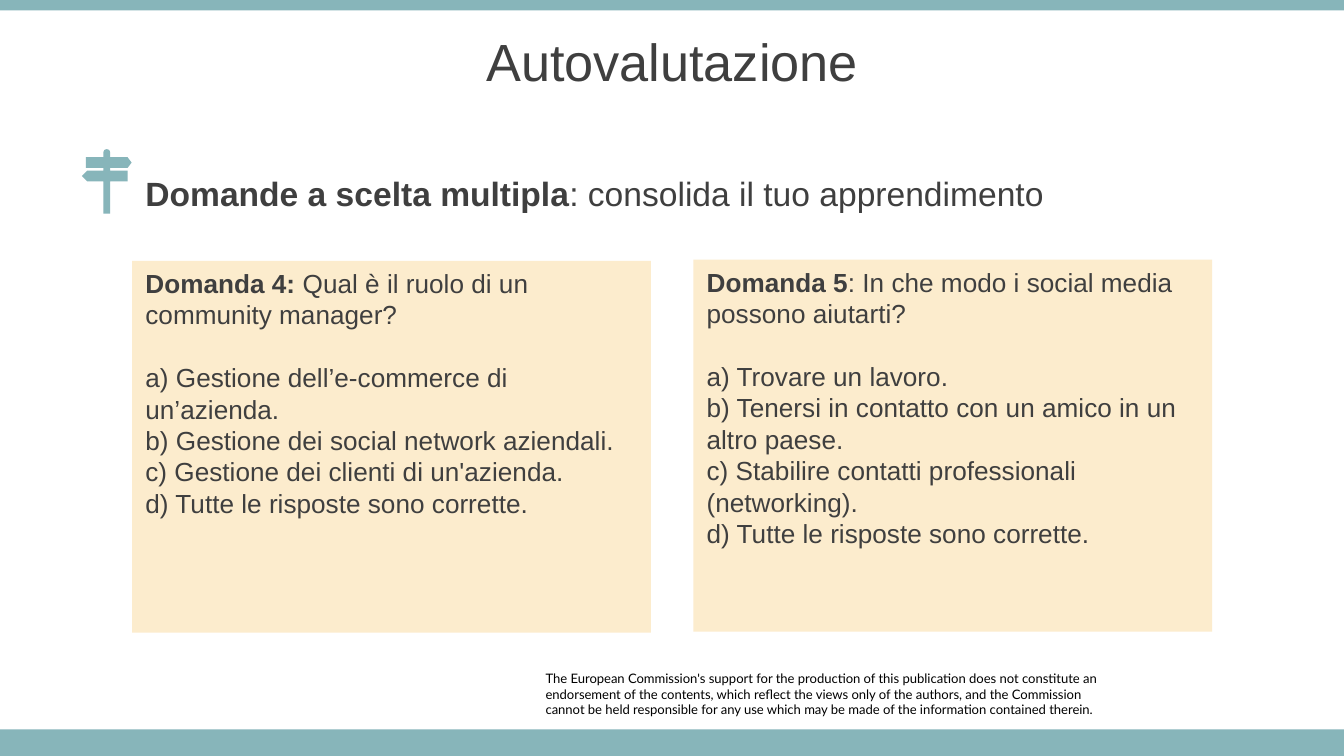
from math import cos, pi, sin

from pptx import Presentation
from pptx.dml.color import RGBColor
from pptx.enum.shapes import MSO_SHAPE
from pptx.enum.text import MSO_ANCHOR, PP_ALIGN
from pptx.util import Inches, Pt

TEAL, CREAM, GREY, BLACK = "87B5BA", "FCECCD", "3F3F3F", "000000"

prs = Presentation()
prs.slide_width, prs.slide_height = Inches(10), Inches(10) * 9 // 16
COL, ROW = prs.slide_width / 100, prs.slide_height / 100
s = prs.slides.add_slide(prs.slide_layouts[6])


def paint(sp, color):
    sp.shadow.inherit = False
    sp.fill.solid()
    sp.fill.fore_color.rgb = RGBColor.from_string(color)
    sp.line.fill.background()


def write(sp, paragraphs, size, color=GREY, font="Arial", align=PP_ALIGN.LEFT,
          anchor=MSO_ANCHOR.MIDDLE):
    tf = sp.text_frame
    tf.word_wrap = True
    tf.vertical_anchor = anchor
    for i, (bold, plain) in enumerate(paragraphs):
        p = tf.paragraphs[0] if i == 0 else tf.add_paragraph()
        p.alignment = align
        p.font.name, p.font.size = font, Pt(size)
        p.font.color.rgb = RGBColor.from_string(color)
        for text, weight in ((bold, True), (plain, False)):
            if text:
                r = p.add_run()
                r.text, r.font.bold = text, weight
    return tf


tb = s.shapes.add_textbox(40.6 * COL, 88.7 * ROW, 41.7 * COL, 6.2 * ROW)
tf = write(tb, [
    ("", "The European Commission's support for the production of this publication does not "
         "constitute an endorsement of the contents, which reflect the views only of the "
         "authors, and the Commission"),
    ("", "cannot be held responsible for any use which may be made of the information "
         "contained therein."),
], 7, BLACK, "Lato", anchor=MSO_ANCHOR.TOP)
tf.margin_left = tf.margin_right = tf.margin_top = tf.margin_bottom = 0

for top, height in ((96.5, 3.5), (0, 1.4)):
    sp = s.shapes.add_shape(MSO_SHAPE.RECTANGLE, 0, top * ROW, 100 * COL, height * ROW)
    paint(sp, TEAL)

title = s.shapes.add_textbox(0, 2.4 * ROW, 100 * COL, 11.2 * ROW)
write(title, [("", "Autovalutazione")], 28, align=PP_ALIGN.CENTER)

heading = s.shapes.add_textbox(9.84 * COL, 22.75 * ROW, 75.8 * COL, 5.5 * ROW)
write(heading, [("Domande a scelta multipla", ": consolida il tuo apprendimento")], 18)

cap = [(795 - 25 * cos(pi * i / 8), 1135 - 25 * sin(pi * i / 8)) for i in range(9)]
right_sign = [(820, 1170), (950, 1170), (980, 1210), (950, 1250), (820, 1250)]
right_post = [(820, 1270), (950, 1270), (950, 1350), (820, 1350), (820, 1590)]
left_sign = [(770, 1590), (770, 1350), (650, 1350), (610, 1310), (650, 1270), (770, 1270)]
left_post = [(770, 1250), (640, 1250), (640, 1170), (770, 1170)]
signpost = cap + right_sign + right_post + left_sign + left_post
fb = s.shapes.build_freeform(*signpost[0], scale=COL / 100)
fb.add_line_segments(signpost[1:], close=True)
paint(fb.convert_to_shape(), TEAL)

questions = [
    (9.84, 34.5, [
        ("Domanda 4: ", "Qual è il ruolo di un community manager?"),
        ("", "a) Gestione dell’e-commerce di un’azienda."),
        ("", "b) Gestione dei social network aziendali."),
        ("", "c) Gestione dei clienti di un'azienda."),
        ("", "d) Tutte le risposte sono corrette."),
    ]),
    (51.6, 34.35, [
        ("Domanda 5", ": In che modo i social media possono aiutarti?"),
        ("", "a) Trovare un lavoro."),
        ("", "b) Tenersi in contatto con un amico in un altro paese."),
        ("", "c) Stabilire contatti professionali (networking)."),
        ("", "d) Tutte le risposte sono corrette."),
    ]),
]
for left, top, paragraphs in questions:
    sp = s.shapes.add_shape(MSO_SHAPE.RECTANGLE, left * COL, top * ROW, 38.6 * COL, 49.2 * ROW)
    paint(sp, CREAM)
    tf = write(sp, paragraphs, 14, anchor=MSO_ANCHOR.TOP)
    tf.paragraphs[1].space_before = Pt(16.8)

prs.save("out.pptx")
